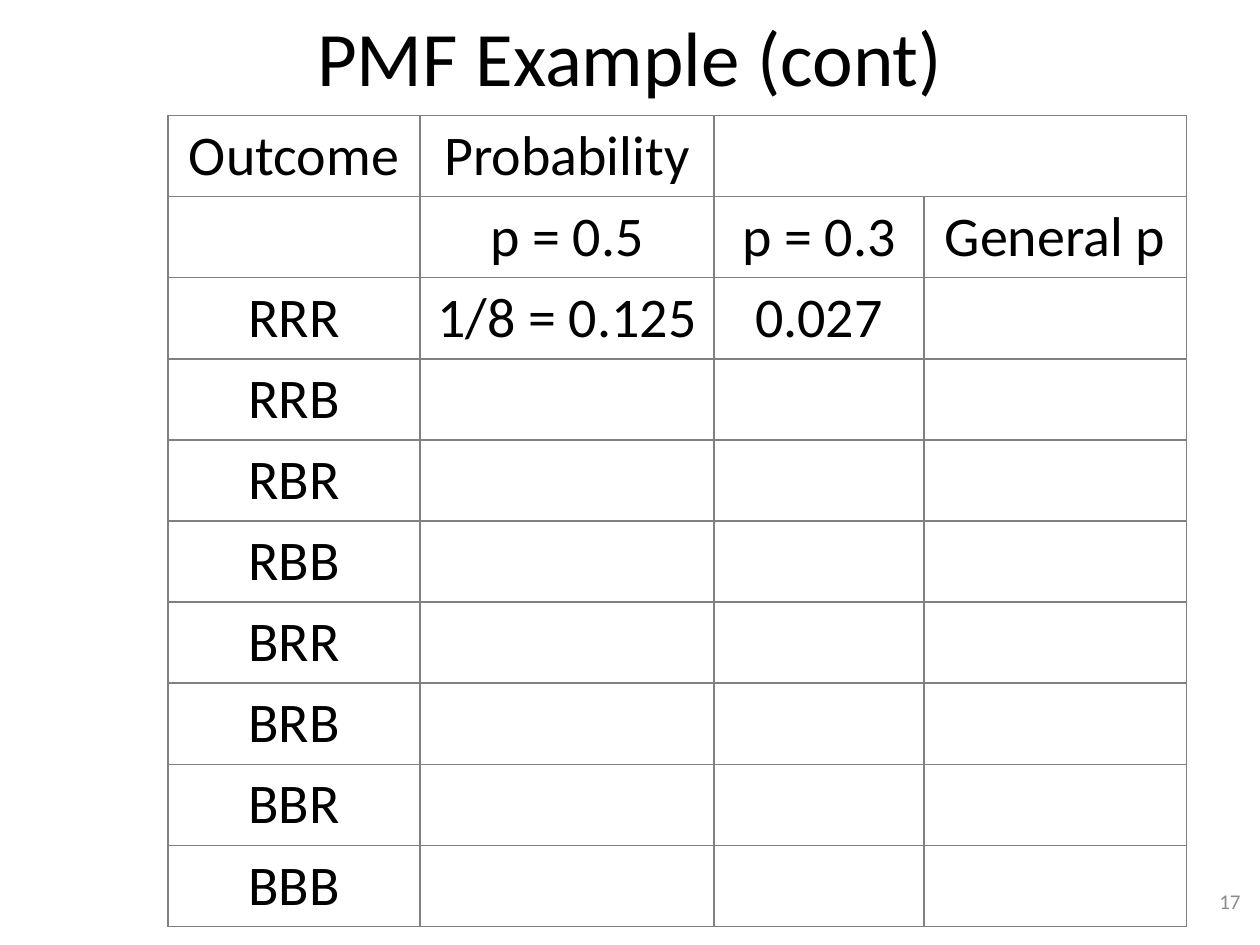
from itertools import product
from lxml.etree import SubElement
from pptx import Presentation
from pptx.dml.color import RGBColor as RGB
from pptx.enum.text import MSO_ANCHOR as Anchor, MSO_AUTO_SIZE as Auto, PP_ALIGN as Align
from pptx.oxml.ns import qn
from pptx.util import Pt

theme = {
    "font": "Calibri",
    "ink": RGB(0, 0, 0),
    "paper": RGB(255, 255, 255),
    "muted": RGB(0x8C, 0x8C, 0x8C),
    "rule": "808080",
    "title": Pt(44),
    "cell": Pt(32),
    "note": Pt(12),
}


def write(frame, text, size, color, align):
    para = frame.paragraphs[0]
    para.text = text
    para.alignment = align
    font = para.font
    if para.runs:
        font = para.runs[0].font
    for name, value in {"name": theme["font"], "size": theme[size]}.items():
        setattr(font, name, value)
    font.color.rgb = theme[color]


def border(cell):
    props = cell._tc.get_or_add_tcPr()
    for side in ("lnL", "lnR", "lnT", "lnB"):
        line = SubElement(props, qn(f"a:{side}"), w=str(Pt(1)))
        fill = SubElement(line, qn("a:solidFill"))
        SubElement(fill, qn("a:srgbClr"), val=theme["rule"])


deck = Presentation()
deck.slide_width, deck.slide_height = Pt(720), Pt(540)
slide = deck.slides.add_slide(deck.slide_layouts[5])

title = slide.shapes.title
place = {"left": Pt(36), "top": Pt(0), "width": Pt(648), "height": Pt(64)}
for name, value in place.items():
    setattr(title, name, value)
frame = title.text_frame
for name, value in {"auto_size": Auto.NONE, "vertical_anchor": Anchor.MIDDLE}.items():
    setattr(frame, name, value)
write(frame, "PMF Example (cont)", "title", "ink", Align.CENTER)

rows = [["Outcome", "Probability", "", ""], ["", "p = 0.5", "p = 0.3", "General p"]]
rows += [["".join(draw), "", "", ""] for draw in product("RB", repeat=3)]
rows[2][1:3] = ["1/8 = 0.125", "0.027"]
widths = [144, 168, 120, 150]
height = 46.3

table = slide.shapes.add_table(
    len(rows), len(widths), Pt(96), Pt(66), Pt(sum(widths)), Pt(height * len(rows))
).table
for name in ("first_row", "horz_banding"):
    setattr(table, name, False)
for col, width in zip(table.columns, widths):
    col.width = Pt(width)
for row, texts in zip(table.rows, rows):
    row.height = Pt(height)
    for cell, text in zip(row.cells, texts):
        border(cell)
        cell.fill.solid()
        cell.fill.fore_color.rgb = theme["paper"]
        write(cell.text_frame, text, "cell", "ink", Align.CENTER)
table.cell(0, 2).merge(table.cell(0, 3))

frame = slide.shapes.add_textbox(Pt(680), Pt(500.5), Pt(36), Pt(28.75)).text_frame
for name, value in {"word_wrap": True, "vertical_anchor": Anchor.MIDDLE}.items():
    setattr(frame, name, value)
write(frame, "17", "note", "muted", Align.RIGHT)

deck.save("out.pptx")
